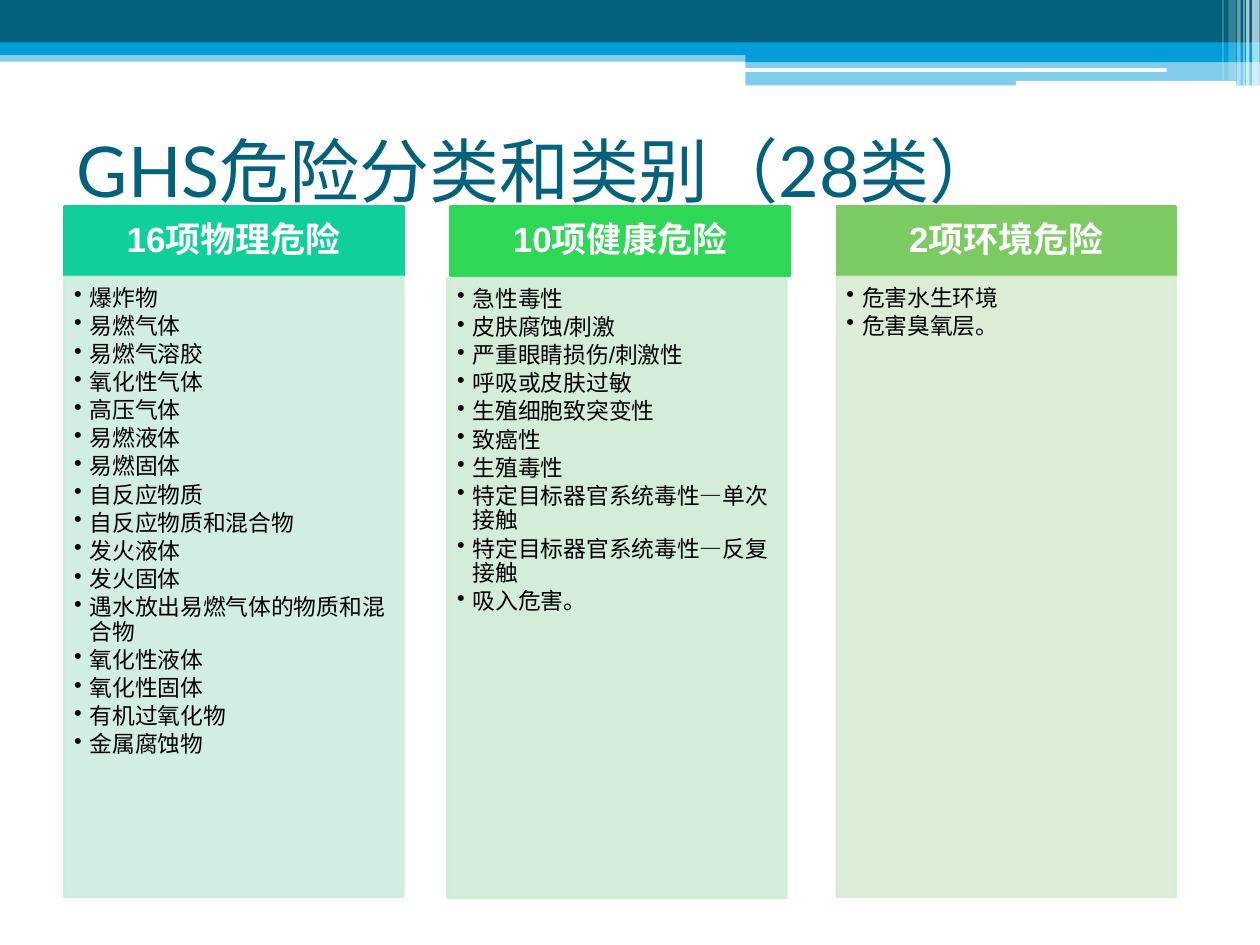
from lxml.etree import SubElement
from pptx import Presentation
from pptx.dml.color import RGBColor
from pptx.enum.shapes import MSO_SHAPE
from pptx.enum.text import MSO_ANCHOR, MSO_AUTO_SIZE, PP_ALIGN
from pptx.oxml.ns import qn
from pptx.util import Pt

WHITE = RGBColor(0xFF, 0xFF, 0xFF)
BLACK = RGBColor(0x00, 0x00, 0x00)
TEAL = RGBColor(0x04, 0x61, 0x7B)
BLUE = RGBColor(0x00, 0x9D, 0xD9)
AQUA = RGBColor(0x10, 0xCF, 0x9B)
PALE_AQUA = RGBColor(0xCC, 0xED, 0xDE)
GREEN = RGBColor(0x2F, 0xD7, 0x57)
PALE_GREEN = RGBColor(0xD0, 0xEC, 0xD5)
OLIVE = RGBColor(0x7C, 0xCA, 0x62)
PALE_OLIVE = RGBColor(0xD8, 0xEC, 0xD3)

RECT, ROUND = MSO_SHAPE.RECTANGLE, MSO_SHAPE.ROUNDED_RECTANGLE

BANDS = [
    (RECT, 0, 28.8, 720, 6.48, BLUE, 50),
    (RECT, 0, 0, 720, 24.5, TEAL, 100),
    (RECT, 0, 24.2, 720, 7.2, BLUE, 100),
    (RECT, 426, 28.3, 294, 7.2, BLUE, 100),
    (RECT, 426, 34.6, 294, 14.2, BLUE, 50),
    (ROUND, 425.5, 38.9, 241.2, 2.2, WHITE, 100),
    (ROUND, 580.5, 46.2, 126, 2.9, WHITE, 100),
]
STRIPES = [
    (715.5, 4.3, 49, 65),
    (712, 2, 49, 65),
    (710.5, 0.7, 49, 60),
    (707, 2, 49, 40),
    (702, 4.3, 46, 20),
    (698.5, 0.7, 46, 30),
]

LEFT, TOP, PITCH, WIDTH = 36.8, 118, 220.7, 193.7
HEADER_H, PANEL_H = 39.7, 354.3
COLUMNS = [
    ("16项物理危险", AQUA, PALE_AQUA, 0, 0, [
        "爆炸物", "易燃气体", "易燃气溶胶", "氧化性气体", "高压气体", "易燃液体",
        "易燃固体", "自反应物质", "自反应物质和混合物", "发火液体", "发火固体",
        "遇水放出易燃气体的物质和混合物", "氧化性液体", "氧化性固体",
        "有机过氧化物", "金属腐蚀物"]),
    ("10项健康危险", GREEN, PALE_GREEN, -1.8, 0.7, [
        "急性毒性", "皮肤腐蚀/刺激", "严重眼睛损伤/刺激性", "呼吸或皮肤过敏",
        "生殖细胞致突变性", "致癌性", "生殖毒性", "特定目标器官系统毒性—单次接触",
        "特定目标器官系统毒性—反复接触", "吸入危害。"]),
    ("2项环境危险", OLIVE, PALE_OLIVE, 0, 0, ["危害水生环境", "危害臭氧层。"]),
]

TITLE_FONT = {"name": "Lato", "size": Pt(40), "bold": False}
HEADER_FONT = {"name": "Arial", "size": Pt(20), "bold": True}
ITEM_FONT = {"name": "Arial", "size": Pt(13), "bold": False}
TITLE_FRAME = {"word_wrap": True, "auto_size": MSO_AUTO_SIZE.NONE,
               "vertical_anchor": MSO_ANCHOR.MIDDLE}
HEADER_FRAME = {"word_wrap": True, "vertical_anchor": MSO_ANCHOR.MIDDLE,
                "margin_left": Pt(11.2), "margin_right": Pt(11.2),
                "margin_top": Pt(6.4), "margin_bottom": Pt(6.4)}
PANEL_FRAME = {"word_wrap": True, "vertical_anchor": MSO_ANCHOR.TOP,
               "margin_left": Pt(5.5), "margin_right": Pt(7.3),
               "margin_top": Pt(5.5), "margin_bottom": Pt(8.2)}
HEADER_PARA = {"alignment": PP_ALIGN.CENTER, "line_spacing": 0.9}
ITEM_PARA = {"alignment": PP_ALIGN.LEFT, "level": 1, "line_spacing": 0.9,
             "space_after": Pt(2)}


def apply(target, values):
    for name, value in values.items():
        setattr(target, name, value)


def set_alpha(fill_parent, alpha):
    color = fill_parent.find(qn("a:solidFill"))[0]
    SubElement(color, qn("a:alpha")).set("val", str(alpha * 1000))


def add_box(s, kind, x, y, w, h, color, alpha=100, outlined=False):
    sp = s.shapes.add_shape(kind, Pt(x), Pt(y), Pt(w), Pt(h))
    sp.shadow.inherit = False
    sp.fill.solid()
    sp.fill.fore_color.rgb = color
    if outlined:
        sp.line.color.rgb = color
        sp.line.width = Pt(1.5)
    else:
        sp.line.fill.background()
    if alpha < 100:
        set_alpha(sp._element.spPr, alpha)
        if outlined:
            set_alpha(sp.line._get_or_add_ln(), alpha)
    return sp


def write(p, text, font, color, para):
    apply(p, para)
    r = p.add_run()
    r.text = text
    apply(r.font, font)
    r.font.color.rgb = color


def add_bullet(p):
    pPr = p._p.get_or_add_pPr()
    pPr.set("marL", str(Pt(9)))
    pPr.set("indent", str(-Pt(9)))
    SubElement(pPr, qn("a:buChar")).set("char", "•")


def add_title(s, text):
    sp = s.shapes.title
    apply(sp, {"left": Pt(36.8), "top": Pt(54.7), "width": Pt(648), "height": Pt(84.2)})
    tf = sp.text_frame
    apply(tf, TITLE_FRAME)
    write(tf.paragraphs[0], text, TITLE_FONT, TEAL, {"alignment": PP_ALIGN.LEFT})


def add_header(s, x, text, color):
    sp = add_box(s, RECT, x, TOP, WIDTH, HEADER_H, color, outlined=True)
    tf = sp.text_frame
    apply(tf, HEADER_FRAME)
    write(tf.paragraphs[0], text, HEADER_FONT, WHITE, HEADER_PARA)


def add_panel(s, x, y, items, color):
    sp = add_box(s, RECT, x, y, WIDTH, PANEL_H, color, 90, outlined=True)
    tf = sp.text_frame
    apply(tf, PANEL_FRAME)
    for i, item in enumerate(items):
        p = tf.add_paragraph() if i else tf.paragraphs[0]
        write(p, item, ITEM_FONT, BLACK, ITEM_PARA)
        add_bullet(p)


def main():
    prs = Presentation()
    prs.slide_width, prs.slide_height = Pt(720), Pt(540)
    s = prs.slides.add_slide(prs.slide_layouts[5])
    for band in BANDS:
        add_box(s, *band)
    for x, w, h, alpha in STRIPES:
        add_box(s, RECT, x, 0, w, h, WHITE, alpha)
    add_title(s, "GHS危险分类和类别（28类）")
    for i, (heading, color, pale, dx, dy, items) in enumerate(COLUMNS):
        x = LEFT + i * PITCH
        add_header(s, x, heading, color)
        add_panel(s, x + dx, TOP + HEADER_H + 0.5 + dy, items, pale)
    prs.save("out.pptx")


if __name__ == "__main__":
    main()
